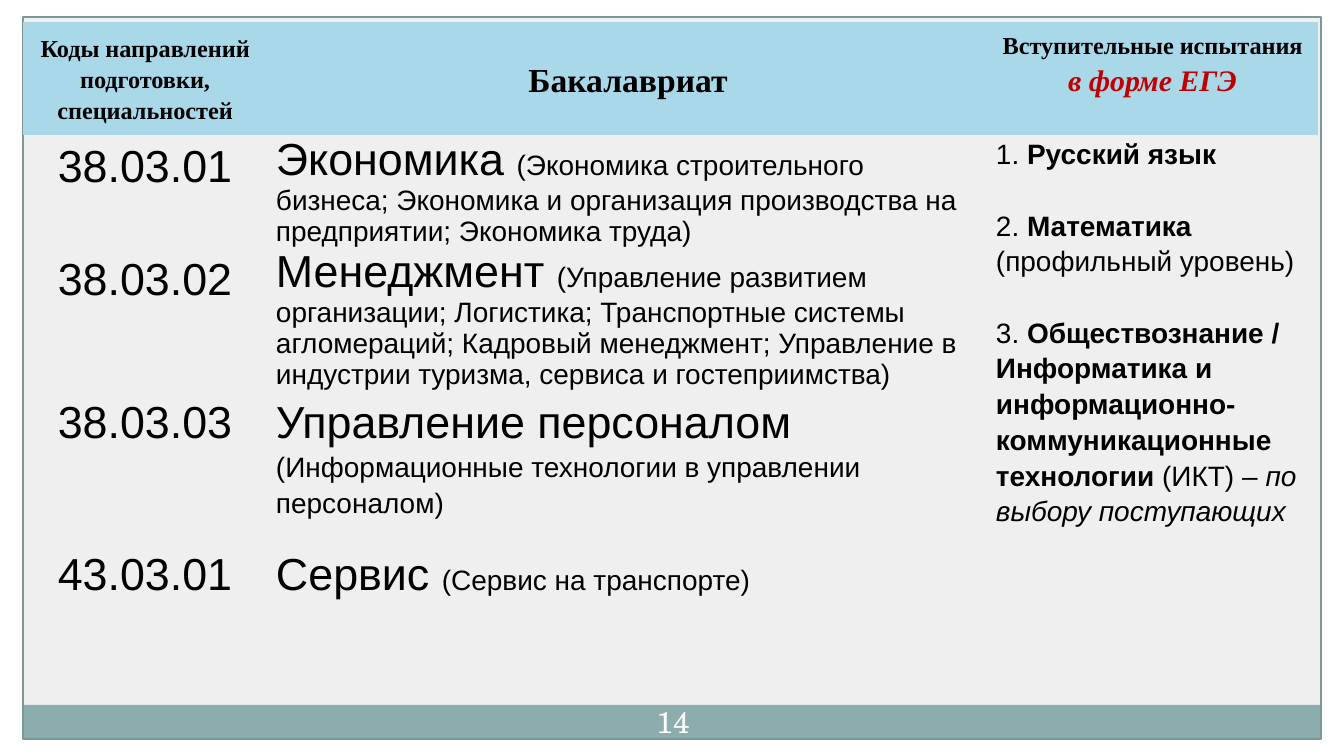
from pptx import Presentation
from pptx.dml.color import RGBColor
from pptx.enum.shapes import MSO_SHAPE as Shape
from pptx.enum.text import MSO_ANCHOR as Anchor, PP_ALIGN as Align
from pptx.util import Pt

SCALE = 914400 / 134.4
WIDE, HIGH = 1344, 756
GREY = RGBColor(0xEF, 0xEF, 0xEF)
WHITE = RGBColor(0xFF, 0xFF, 0xFF)
TEAL = RGBColor(0x8C, 0xAD, 0xAE)
EDGE = RGBColor(0x7C, 0x99, 0x9A)
BLUE = RGBColor(0xA9, 0xD8, 0xE9)
BLACK = RGBColor(0, 0, 0)
RED = RGBColor(0xC0, 0, 0)
SERIF, SANS, SCHOLA = "Times New Roman", "Arial", "TeX Gyre Schola"
PLAIN = "{2D5ABB26-0587-4C30-8999-92F81FD0307C}"  # no style, no grid

COLS = [246, 720, 329]
ROWS = [113, 102, 122, 152, 133]

# Code, programme, profiles, line spacing
COURSES = [
    ("38.03.01", "Экономика ",
     "(Экономика строительного бизнеса; Экономика и организация "
     "производства на предприятии; Экономика труда)", 1.0),
    ("38.03.02", "Менеджмент ",
     "(Управление развитием организации; Логистика; Транспортные системы "
     "агломераций; Кадровый менеджмент; Управление в индустрии туризма, "
     "сервиса и гостеприимства)", 1.0),
    ("38.03.03", "Управление персоналом ",
     "(Информационные технологии в управлении персоналом)", 1.15),
    ("43.03.01", "Сервис ", "(Сервис на транспорте)", 1.15),
]

# Each exam is a list of (text, bold, italic)
EXAMS = [
    [("1. ", False, False), ("Русский язык", True, False)],
    [("2. ", False, False), ("Математика ", True, False),
     ("(профильный уровень)", False, False)],
    [("3. ", False, False),
     ("Обществознание / Информатика и информационно-коммуникационные "
      "технологии", True, False),
     (" (ИКТ) – ", False, False), ("по выбору поступающих", False, True)],
]


def px(n):
    return round(n * SCALE)


def add_box(slide, left, top, width, height, fill=None, line=None):
    box = slide.shapes.add_shape(
        Shape.RECTANGLE, px(left), px(top), px(width), px(height))
    box.shadow.inherit = False
    if fill is None:
        box.fill.background()
    else:
        box.fill.solid()
        box.fill.fore_color.rgb = fill
    if line is None:
        box.line.fill.background()
    else:
        box.line.color.rgb = line
        box.line.width = Pt(0.75)


def add_run(para, text, size, name=SANS, color=BLACK, bold=False, italic=False):
    run = para.add_run()
    run.text = text
    font = run.font
    font.size, font.name = Pt(size), name
    font.bold, font.italic = bold, italic
    font.color.rgb = color


def set_para(para, align=Align.LEFT, space=1.15):
    para.alignment = align
    para.line_spacing = space
    return para


def set_cell(cell, fill=None, anchor=Anchor.TOP, top=0):
    cell.margin_left, cell.margin_right = px(7), px(9)
    cell.margin_top, cell.margin_bottom = px(top), 0
    cell.vertical_anchor = anchor
    if fill is None:
        cell.fill.background()
    else:
        cell.fill.solid()
        cell.fill.fore_color.rgb = fill
    return cell.text_frame


def add_grid(slide):
    frame = slide.shapes.add_table(
        len(ROWS), len(COLS), px(23), px(22), px(sum(COLS)), px(sum(ROWS)))
    table = frame.table
    table.first_row = table.horz_banding = False
    table._tbl.tblPr.find("{*}tableStyleId").text = PLAIN
    for col, width in zip(table.columns, COLS):
        col.width = px(width)
    for row, height in zip(table.rows, ROWS):
        row.height = px(height)
    return table


def fill_head(table):
    heads = [("Коды направлений подготовки, специальностей", 13),
             ("Бакалавриат", 18)]
    for col, (text, size) in enumerate(heads):
        frame = set_cell(table.cell(0, col), BLUE, Anchor.MIDDLE)
        add_run(set_para(frame.paragraphs[0], Align.CENTER),
                text, size, SERIF, bold=True)
    frame = set_cell(table.cell(0, 2), BLUE, top=7)
    para = set_para(frame.paragraphs[0], Align.CENTER)
    add_run(para, "Вступительные испытания ", 13, SERIF, bold=True)
    add_run(para, "в форме ЕГЭ", 16, SERIF, RED, True, True)


def fill_courses(table):
    for row, (code, name, topics, space) in enumerate(COURSES, 1):
        frame = set_cell(table.cell(row, 0))
        add_run(set_para(frame.paragraphs[0], Align.CENTER), code, 24)
        frame = set_cell(table.cell(row, 1))
        para = set_para(frame.paragraphs[0], space=space)
        add_run(para, name, 24)
        add_run(para, topics, 15)


def fill_exams(table):
    cell = table.cell(1, 2)
    cell.merge(table.cell(len(COURSES), 2))
    frame = set_cell(cell)
    for i, exam in enumerate(EXAMS):
        para = set_para(frame.add_paragraph() if i else frame.paragraphs[0])
        para.space_before = Pt(19 if i else 0)
        for text, bold, italic in exam:
            add_run(para, text, 15, bold=bold, italic=italic)


def add_number(slide, text):
    box = slide.shapes.add_textbox(px(628), px(698), px(90), px(48))
    frame = box.text_frame
    frame.word_wrap = True
    frame.vertical_anchor = Anchor.MIDDLE
    frame.margin_left = frame.margin_right = px(7)
    frame.margin_top = frame.margin_bottom = px(7)
    add_run(set_para(frame.paragraphs[0], Align.CENTER, 1.0),
            text, 16, SCHOLA, WHITE)


def main():
    deck = Presentation()
    deck.slide_width, deck.slide_height = px(WIDE), px(HIGH)
    slide = deck.slides.add_slide(deck.slide_layouts[6])
    slide.background.fill.solid()
    slide.background.fill.fore_color.rgb = GREY

    # White margins, footer band and frame
    add_box(slide, 0, 739, WIDE, 17, WHITE)
    add_box(slide, 0, 0, WIDE, 17, WHITE)
    add_box(slide, 1321, 0, 23, HIGH, WHITE)
    add_box(slide, 0, 0, 23, HIGH, WHITE)
    add_box(slide, 22, 705, 1298, 34, TEAL)
    add_box(slide, 23, 17, 1298, 722, line=EDGE)

    # Table of programmes and exams
    table = add_grid(slide)
    fill_head(table)
    fill_courses(table)
    fill_exams(table)

    # Page number
    add_number(slide, "14")
    deck.save("out.pptx")


if __name__ == "__main__":
    main()
